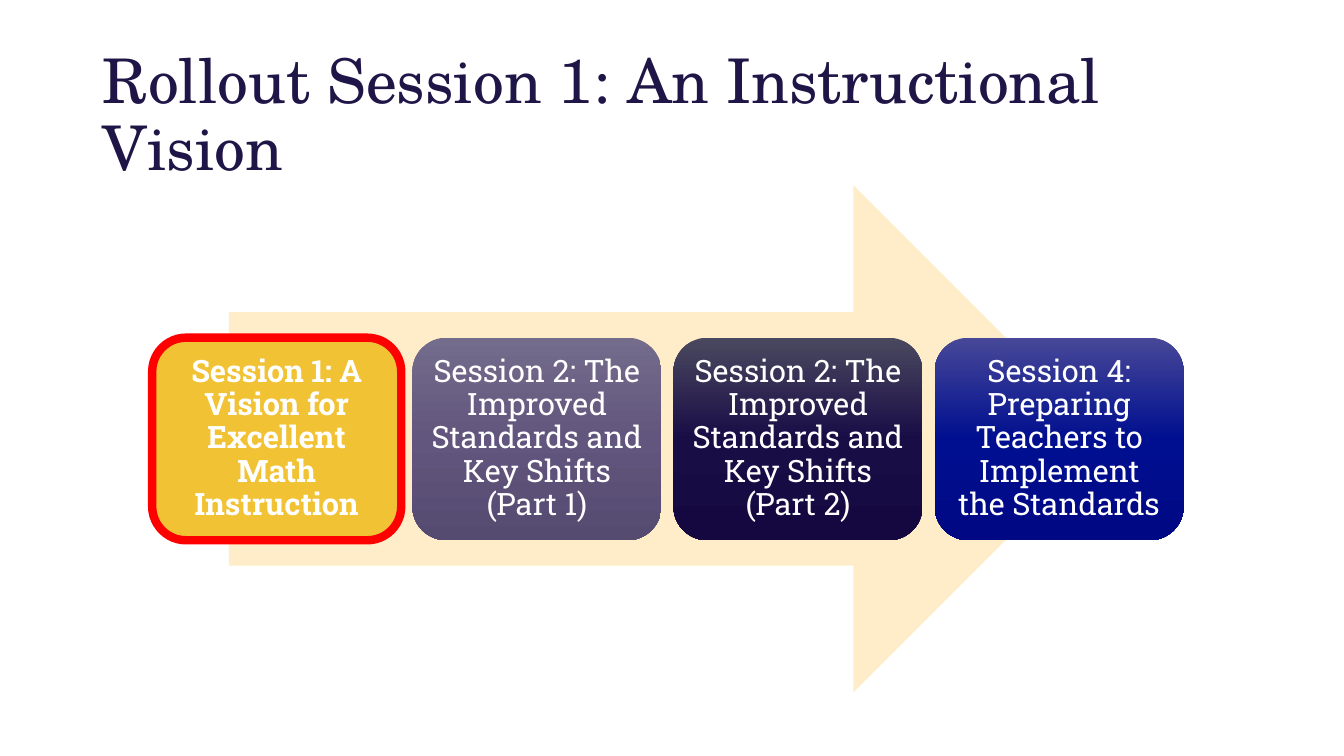
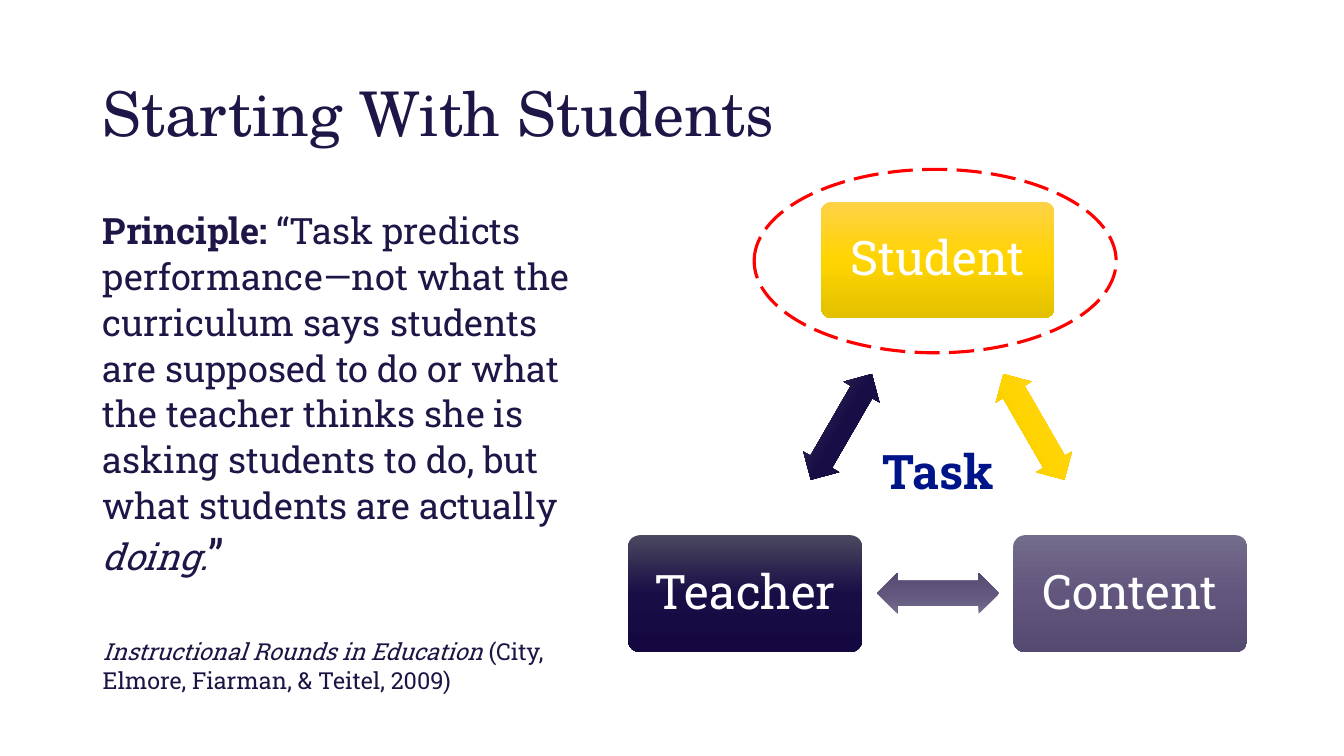
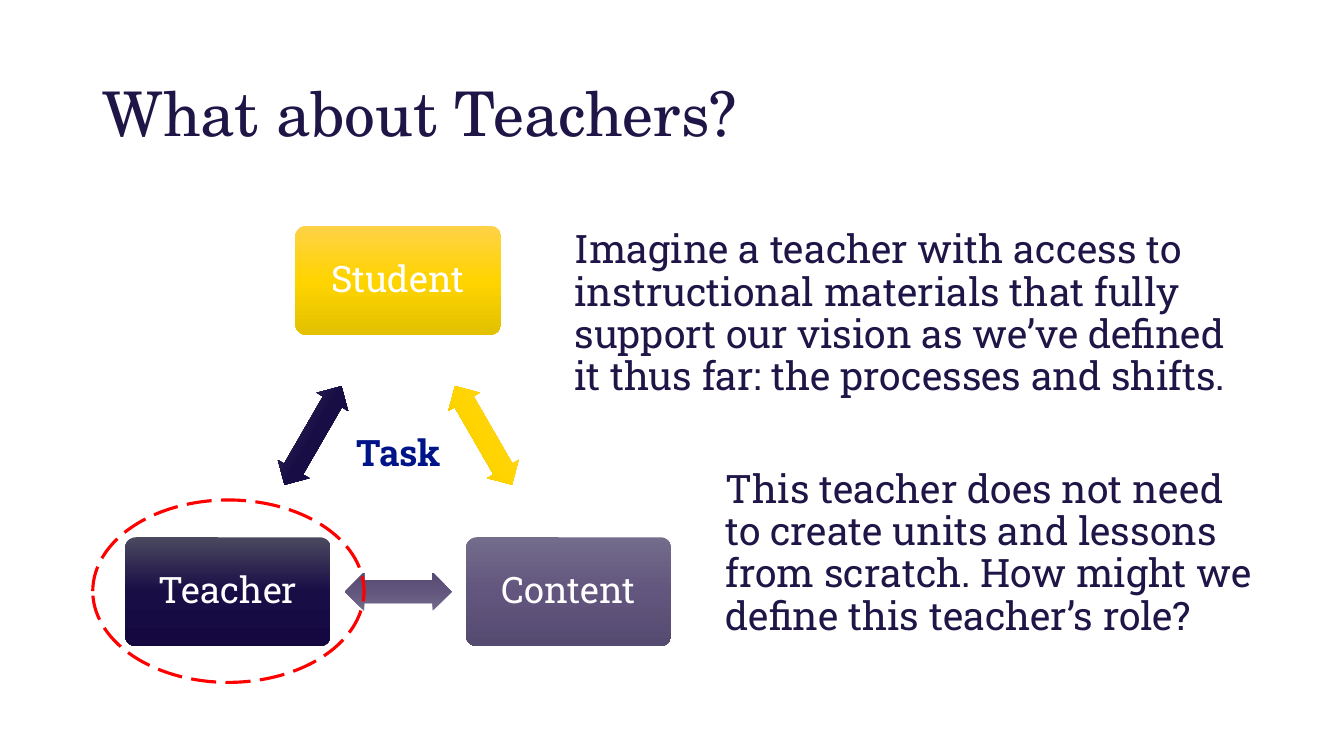
from dataclasses import dataclass
from typing import NamedTuple

from lxml.etree import SubElement
from pptx import Presentation
from pptx.dml.color import RGBColor as Rgb
from pptx.enum.dml import MSO_LINE as Dash
from pptx.enum.shapes import MSO_SHAPE as Kind
from pptx.enum.text import MSO_ANCHOR as Anchor, PP_ALIGN as Align
from pptx.oxml.ns import qn
from pptx.shapes.autoshape import Shape
from pptx.slide import Slide
from pptx.util import Emu, Pt

SCALE = 9144
HEAD = "TeX Gyre Schola"
BODY = "Roboto Slab"
COLORS = {
    "ink": "201547",
    "deep": "1E1444",
    "blue": "001489",
    "white": "FFFFFF",
    "red": "FF0000",
    "cream": "FFEDCA",
    "gold": "F1C234",
}
FADES = {
    "yellow": ("FFD247", "FFD400", "E3C100"),
    "mauve": ("746C8B", "62567E", "554A70"),
    "night": ("4A485F", "190D46", "150840"),
    "royal": ("474897", "000F8F", "000884"),
}


class Box(NamedTuple):
    x: int
    y: int
    w: int
    h: int


class Run(NamedTuple):
    text: str
    bold: bool | None = None
    slant: bool | None = None
    size: float | None = None


@dataclass
class Para:
    runs: list[Run]
    size: float
    color: str = "ink"
    font: str = BODY
    bold: bool = False
    lead: float = 1
    before: int = 0
    indent: int = 0
    align: Align = Align.LEFT


@dataclass
class Card:
    text: str
    fill: str
    bold: bool = False
    edge: str = ""


@dataclass
class Triad:
    mid: int
    reach: int
    top: int
    base: int
    node: tuple[int, int]
    side: tuple[int, int]
    foot: tuple[int, int]
    task: int
    size: int


CARDS = [
    Card("Session 1: A Vision for Excellent Math Instruction", "gold", True, "red"),
    Card("Session 2: The Improved Standards and Key Shifts (Part 1)", "mauve"),
    Card("Session 2: The Improved Standards and Key Shifts (Part 2)", "night"),
    Card("Session 4: Preparing Teachers to Implement the Standards", "royal"),
]


def px(n: int) -> Emu:
    return Emu(n * SCALE)


def rgb(name: str) -> Rgb:
    return Rgb.from_string(COLORS[name])


def center(x: float, y: float, size: tuple[int, int]) -> Box:
    w, h = size
    return Box(round(x - w / 2), round(y - h / 2), w, h)


def write(shape: Shape, paras: list[Para], pad: tuple[int, int],
          anchor: Anchor = Anchor.TOP) -> None:
    frame = shape.text_frame
    frame.word_wrap = True
    frame.vertical_anchor = anchor
    frame.margin_left = frame.margin_right = px(pad[0])
    frame.margin_top = frame.margin_bottom = px(pad[1])
    for i, para in enumerate(paras):
        line = frame.add_paragraph() if i else frame.paragraphs[0]
        line.alignment = para.align
        line.line_spacing = para.lead
        if para.before:
            line.space_before = Pt(para.before)
        if para.indent:
            line._p.get_or_add_pPr().set("marL", str(px(para.indent)))
        font = line.font
        font.name, font.size, font.bold = para.font, Pt(para.size), para.bold
        font.color.rgb = rgb(para.color)
        for part in para.runs:
            run = line.add_run()
            run.text = part.text
            if part.bold is not None:
                run.font.bold = part.bold
            if part.slant is not None:
                run.font.italic = part.slant
            if part.size:
                run.font.size = Pt(part.size)


def label(slide: Slide, box: Box, paras: list[Para],
          pad: tuple[int, int] = (10, 5), anchor: Anchor = Anchor.TOP) -> None:
    write(slide.shapes.add_textbox(*map(px, box)), paras, pad, anchor)


def fade(shape: Shape, name: str) -> None:
    shape.fill.gradient()
    shape.fill.gradient_angle = 270
    stops = shape._element.spPr.find(qn("a:gradFill")).find(qn("a:gsLst"))
    for old in list(stops):
        stops.remove(old)
    for i, color in enumerate(FADES[name]):
        stop = SubElement(stops, qn("a:gs"), pos=str(i * 50000))
        SubElement(stop, qn("a:srgbClr"), val=color)


def draw(slide: Slide, kind: Kind, box: Box, fill: str = "",
         adjust: tuple[float, ...] = (), turn: int = 0) -> Shape:
    shape = slide.shapes.add_shape(kind, *map(px, box))
    shape.shadow.inherit = False
    shape.line.fill.background()
    shape.rotation = turn
    for i, value in enumerate(adjust):
        shape.adjustments[i] = value
    if fill in FADES:
        fade(shape, fill)
    elif fill:
        shape.fill.solid()
        shape.fill.fore_color.rgb = rgb(fill)
    else:
        shape.fill.background()
    return shape


def edge(shape: Shape, color: str, width: float) -> None:
    shape.line.color.rgb = rgb(color)
    shape.line.width = Pt(width)


def ring(slide: Slide, box: Box) -> None:
    shape = draw(slide, Kind.OVAL, box)
    edge(shape, "red", 2.25)
    shape.line.dash_style = Dash.LONG_DASH


def title(slide: Slide, text: str) -> None:
    para = Para([Run(text)], 44, font=HEAD, lead=0.9)
    label(slide, Box(92, 47, 1150, 138), [para], anchor=Anchor.MIDDLE)


def tile(slide: Slide, box: Box, card: Card, size: int, curve: float,
         pad: int) -> None:
    shape = draw(slide, Kind.ROUNDED_RECTANGLE, box, card.fill, (curve,))
    if card.edge:
        edge(shape, card.edge, 6)
    para = Para([Run(card.text)], size, "white", bold=card.bold, lead=0.9,
                align=Align.CENTER)
    write(shape, [para], (pad, pad), Anchor.MIDDLE)


def triad(slide: Slide, plan: Triad) -> None:
    left, right = plan.mid - plan.reach, plan.mid + plan.reach
    half, level = plan.reach / 2, (plan.top + plan.base) / 2
    nodes = [
        (plan.mid, plan.top, Card("Student", "yellow")),
        (right, plan.base, Card("Content", "mauve")),
        (left, plan.base, Card("Teacher", "night")),
    ]
    arrows = [
        (plan.mid + half, level, plan.side, 60),
        (plan.mid, plan.base, plan.foot, 180),
        (plan.mid - half, level, plan.side, 300),
    ]
    for (x, y, card), (ax, ay, size, turn) in zip(nodes, arrows):
        tile(slide, center(x, y, plan.node), card, plan.size, 0.1, 14)
        draw(slide, Kind.LEFT_RIGHT_ARROW, center(ax, ay, size), card.fill,
             (0.6, 0.5), turn)
    task = Para([Run("Task")], plan.size, "blue", bold=True, align=Align.CENTER)
    label(slide, Box(plan.mid - 102, plan.task, 205, 67), [task])


def rollout(slide: Slide) -> None:
    title(slide, "Rollout Session 1: An Instructional Vision")
    draw(slide, Kind.RIGHT_ARROW, Box(227, 184, 871, 503), "cream", (0.5, 0.5))
    for i, card in enumerate(CARDS):
        tile(slide, Box(151 + 776 * i // 3, 335, 247, 201), card, 22, 0.167, 9)


def students(slide: Slide) -> None:
    title(slide, "Starting With Students")
    quote = [
        Run("Principle: ", bold=True),
        Run("“Task predicts performance—not what the curriculum says students "
            "are supposed to do or what the teacher thinks she is asking "
            "students to do, but what students are actually "),
        Run("doing.", slant=True),
        Run("”", size=30.1),
    ]
    source = [
        Run("Instructional Rounds in Education", slant=True),
        Run(" (City, Elmore, Fiarman, & Teitel, 2009)"),
    ]
    label(slide, Box(92, 200, 506, 491), [
        Para(quote, 25.9, lead=1.05),
        Para(source, 16.7, "deep", lead=1.05, before=40),
    ])
    triad(slide, Triad(930, 191, 258, 589, (232, 116), (121, 41), (121, 41),
                       434, 34))
    ring(slide, Box(748, 168, 359, 182))


def teachers(slide: Slide) -> None:
    title(slide, "What about Teachers?")
    triad(slide, Triad(395, 169, 278, 587, (204, 108), (113, 36), (106, 38),
                       422, 26))
    ring(slide, Box(92, 496, 269, 181))
    access = ("Imagine a teacher with access to instructional materials that "
              "fully support our vision as we’ve defined it thus far: the "
              "processes and shifts.")
    role = ("This teacher does not need to create units and lessons from "
            "scratch. How might we define this teacher’s role?")
    label(slide, Box(560, 218, 697, 430), [
        Para([Run(access)], 28, lead=0.9),
        Para([Run(role)], 28, lead=0.9, before=50, indent=150),
    ], (10, 10))


def main() -> None:
    deck = Presentation()
    deck.slide_width, deck.slide_height = px(1333), px(750)
    for build in (rollout, students, teachers):
        build(deck.slides.add_slide(deck.slide_layouts[6]))
    deck.save("out.pptx")


if __name__ == "__main__":
    main()
